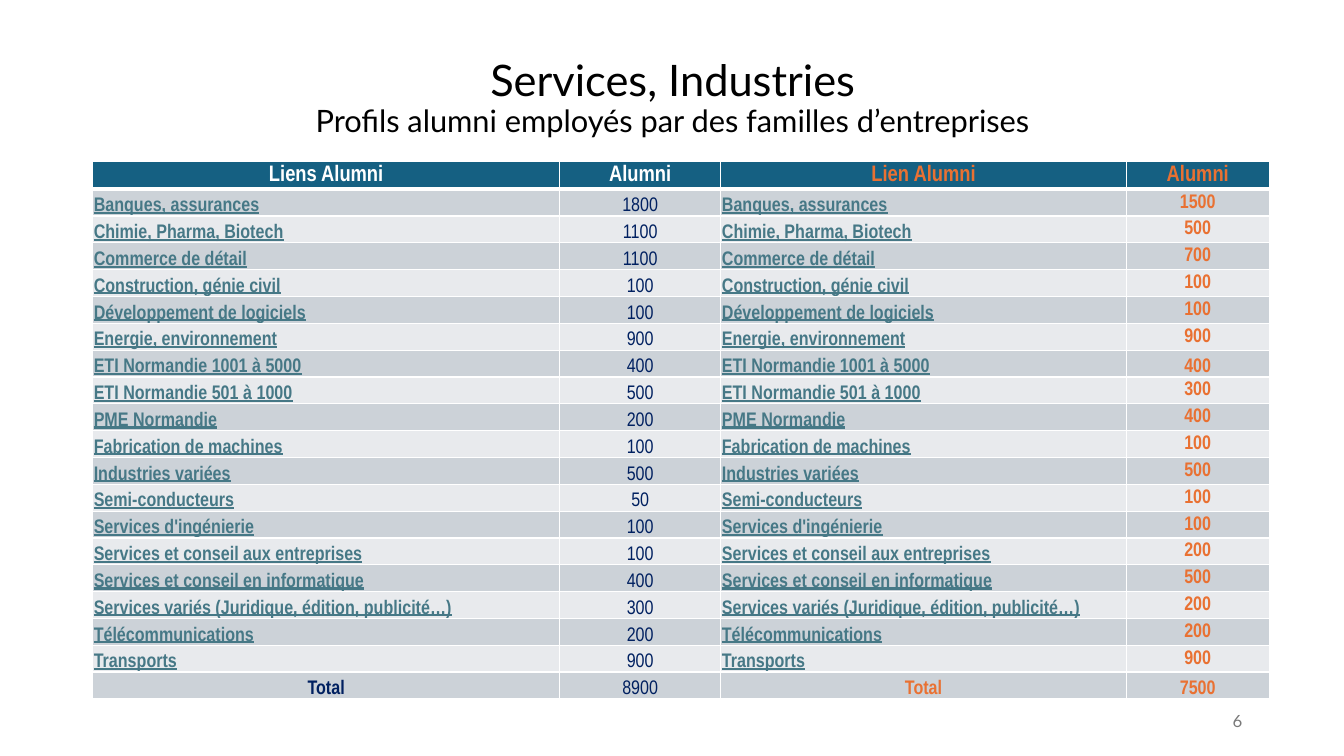
import pptx
import pptx.util
import pptx.dml.color
import pptx.enum.text
import pptx.oxml.ns
from dataclasses import dataclass
from lxml import etree

Inches = pptx.util.Inches
ALIGN = pptx.enum.text.PP_ALIGN
ANCHOR = pptx.enum.text.MSO_ANCHOR


@dataclass(frozen=True)
class Theme:
    """Colours, fonts and type sizes of the slide."""
    black: str = "000000"
    white: str = "FFFFFF"
    header: str = "156082"
    bands: tuple = ("E8EAED", "CCD2D8")
    link: str = "467886"
    navy: str = "002060"
    orange: str = "E97132"
    grey: str = "797979"
    text_font: str = "Lato"
    table_font: str = "Arial Narrow"
    title_size: int = 31
    subtitle_size: int = 22
    header_size: int = 16
    body_size: int = 14
    number_size: int = 12


THEME = Theme()
HEADERS = ("Liens Alumni", "Alumni", "Lien Alumni", "Alumni")
COLUMN_WIDTHS = (4.63, 1.6, 4.02, 1.42)
FAMILIES = (
    ("Banques, assurances", 1800, 1500),
    ("Chimie, Pharma, Biotech", 1100, 500),
    ("Commerce de détail", 1100, 700),
    ("Construction, génie civil", 100, 100),
    ("Développement de logiciels", 100, 100),
    ("Energie, environnement", 900, 900),
    ("ETI Normandie 1001 à 5000", 400, 400),
    ("ETI Normandie 501 à 1000", 500, 300),
    ("PME Normandie", 200, 400),
    ("Fabrication de machines", 100, 100),
    ("Industries variées", 500, 500),
    ("Semi-conducteurs", 50, 100),
    ("Services d'ingénierie", 100, 100),
    ("Services et conseil aux entreprises", 100, 200),
    ("Services et conseil en informatique", 400, 500),
    ("Services variés (Juridique, édition, publicité…)", 300, 200),
    ("Télécommunications", 200, 200),
    ("Transports", 900, 900),
    ("Total", 8900, 7500),
)
LOW_ANCHORED = ("ETI Normandie 1001 à 5000", "Total")


def add_run(p, text, size, color, font, **styles):
    """Append a formatted run to a paragraph."""
    r = p.add_run()
    r.text = text
    formats = {"size": pptx.util.Pt(size), "name": font, **styles}
    for name, value in formats.items():
        setattr(r.font, name, value)
    r.font.color.rgb = pptx.dml.color.RGBColor.from_string(color)


def add_text_box(s, box, align):
    """Add a wrapped, vertically centred text box and return its paragraph."""
    tf = s.shapes.add_textbox(*map(Inches, box)).text_frame
    tf.word_wrap = True
    tf.vertical_anchor = ANCHOR.MIDDLE
    p = tf.paragraphs[0]
    p.alignment = align
    return p


def add_title(s, box):
    """Write the title and its subtitle line."""
    p = add_text_box(s, box, ALIGN.CENTER)
    p.line_spacing = 0.9
    add_run(p, "Services, Industries", THEME.title_size, THEME.black, THEME.text_font)
    p.add_line_break()
    add_run(p, "Profils alumni employés par des familles d’entreprises",
            THEME.subtitle_size, THEME.black, THEME.text_font)


def add_page_number(s, box):
    """Write the slide number."""
    p = add_text_box(s, box, ALIGN.RIGHT)
    add_run(p, "6", THEME.number_size, THEME.grey, THEME.text_font)


def set_borders(cell, top, bottom):
    """Draw white cell borders with the given top and bottom widths in points."""
    qn = pptx.oxml.ns.qn
    tcPr = cell._tc.get_or_add_tcPr()
    for side, width in {"L": 1, "R": 1, "T": top, "B": bottom}.items():
        ln = etree.SubElement(tcPr, qn(f"a:ln{side}"), w=str(pptx.util.Pt(width)))
        fill = etree.SubElement(ln, qn("a:solidFill"))
        etree.SubElement(fill, qn("a:srgbClr"), val=THEME.white)


def cell_style(row, column, family):
    """Return colour, font styles, alignment and anchor of a table cell."""
    right_half = column > 1
    if row == 0:
        color = THEME.orange if right_half else THEME.white
        return color, {"bold": True}, ALIGN.CENTER, ANCHOR.MIDDLE
    if column % 2 == 0 and family != "Total":
        return THEME.link, {"bold": True, "underline": True}, ALIGN.LEFT, ANCHOR.BOTTOM
    color = THEME.orange if right_half else THEME.navy
    centred = column == 3 and family not in LOW_ANCHORED
    anchor = ANCHOR.MIDDLE if centred else ANCHOR.BOTTOM
    return color, {"bold": column != 1}, ALIGN.CENTER, anchor


def fill_cell(cell, row, column, text, family):
    """Fill, border and write one table cell."""
    color, styles, align, anchor = cell_style(row, column, family)
    edge = Inches(0.01)
    formats = {"margin_left": edge, "margin_right": edge, "margin_top": edge,
               "margin_bottom": 0, "vertical_anchor": anchor}
    for name, value in formats.items():
        setattr(cell, name, value)
    set_borders(cell, 3 if row == 1 else 1, 3 if row == 0 else 1)
    cell.fill.solid()
    background = THEME.bands[row % 2] if row else THEME.header
    cell.fill.fore_color.rgb = pptx.dml.color.RGBColor.from_string(background)
    p = cell.text_frame.paragraphs[0]
    p.alignment = align
    size = THEME.body_size if row else THEME.header_size
    add_run(p, text, size, color, THEME.table_font, **styles)


def add_alumni_table(s, box):
    """Build the table of alumni by company family."""
    rows = [HEADERS] + [(name, str(left), name, str(right))
                        for name, left, right in FAMILIES]
    table = s.shapes.add_table(len(rows), len(HEADERS), *map(Inches, box)).table
    for column, width in zip(table.columns, COLUMN_WIDTHS):
        column.width = Inches(width)
    for i, values in enumerate(rows):
        table.rows[i].height = Inches(box[3] / len(rows))
        for j, text in enumerate(values):
            fill_cell(table.cell(i, j), i, j, text, values[0])


def main():
    """Build and save the slide."""
    prs = pptx.Presentation()
    prs.slide_width, prs.slide_height = Inches(13.33), Inches(7.5)
    s = prs.slides.add_slide(prs.slide_layouts[6])
    add_title(s, (0.92, 0.51, 11.5, 0.95))
    add_alumni_table(s, (0.92, 1.6, 11.67, 5.33))
    add_page_number(s, (9.42, 6.95, 3, 0.4))
    prs.save("out.pptx")


if __name__ == "__main__":
    main()
